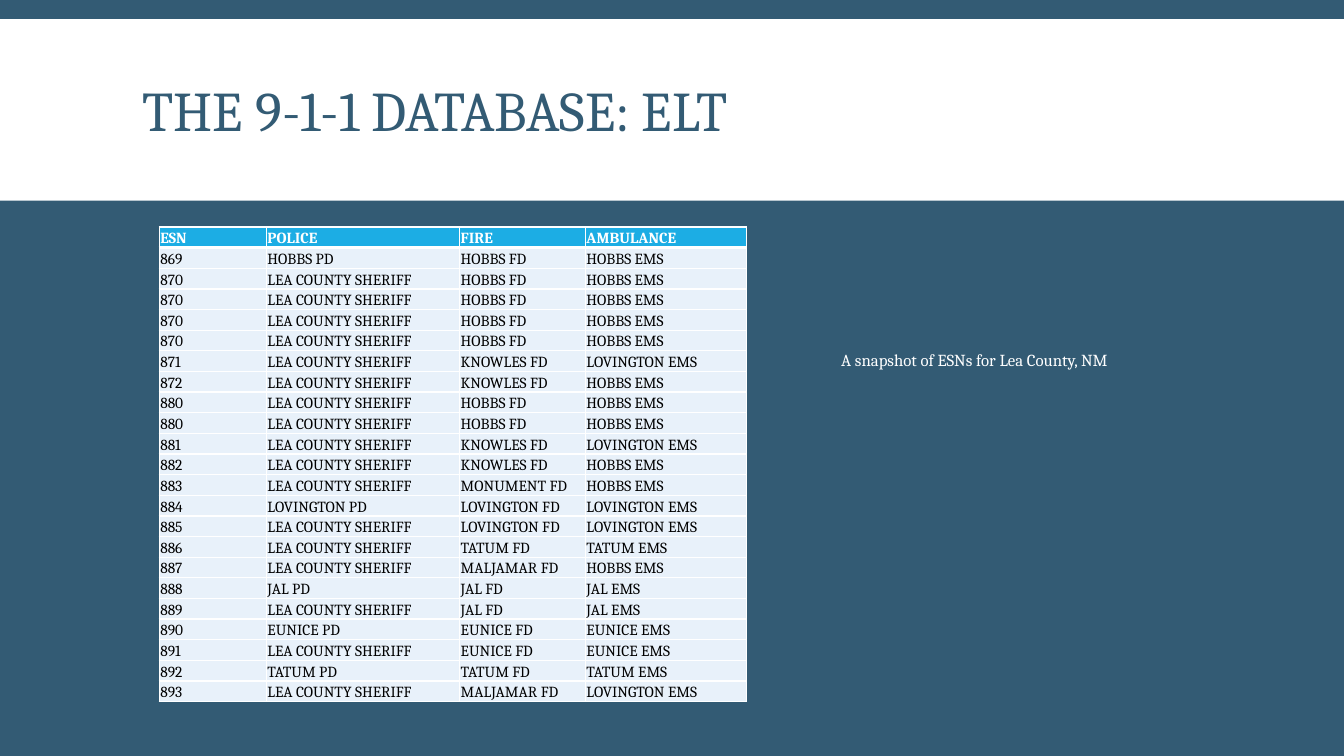
from typing import NamedTuple

from lxml import etree
from pptx import Presentation
from pptx import util as u
from pptx.dml import color
from pptx.enum import shapes, text
from pptx.oxml import ns

FONT = "Cambria"
NAVY, WHITE, BLACK = "335B74", "FFFFFF", "000000"
HEADER_BLUE, ROW_BLUE = "1CADE4", "E8F1FA"


class Zone(NamedTuple):
    """Service zone: emergency service number and its responders."""
    esn: str
    police: str
    fire: str
    ambulance: str


class Label(NamedTuple):
    wording: str
    left: float
    top: float
    width: float
    height: float
    size: float
    colour: str
    anchor: text.MSO_ANCHOR
    wrap: bool
    line_spacing: float


SHERIFF = "LEA COUNTY SHERIFF"
HEADER = Zone("ESN", "POLICE", "FIRE", "AMBULANCE")
ZONES = [
    Zone("869", "HOBBS PD", "HOBBS FD", "HOBBS EMS"),
    *[Zone("870", SHERIFF, "HOBBS FD", "HOBBS EMS")] * 4,
    Zone("871", SHERIFF, "KNOWLES FD", "LOVINGTON EMS"),
    Zone("872", SHERIFF, "KNOWLES FD", "HOBBS EMS"),
    *[Zone("880", SHERIFF, "HOBBS FD", "HOBBS EMS")] * 2,
    Zone("881", SHERIFF, "KNOWLES FD", "LOVINGTON EMS"),
    Zone("882", SHERIFF, "KNOWLES FD", "HOBBS EMS"),
    Zone("883", SHERIFF, "MONUMENT FD", "HOBBS EMS"),
    Zone("884", "LOVINGTON PD", "LOVINGTON FD", "LOVINGTON EMS"),
    Zone("885", SHERIFF, "LOVINGTON FD", "LOVINGTON EMS"),
    Zone("886", SHERIFF, "TATUM FD", "TATUM EMS"),
    Zone("887", SHERIFF, "MALJAMAR FD", "HOBBS EMS"),
    Zone("888", "JAL PD", "JAL FD", "JAL EMS"),
    Zone("889", SHERIFF, "JAL FD", "JAL EMS"),
    Zone("890", "EUNICE PD", "EUNICE FD", "EUNICE EMS"),
    Zone("891", SHERIFF, "EUNICE FD", "EUNICE EMS"),
    Zone("892", "TATUM PD", "TATUM FD", "TATUM EMS"),
    Zone("893", SHERIFF, "MALJAMAR FD", "LOVINGTON EMS"),
]
COLUMN_WIDTHS = [2.7, 4.87, 3.17, 4.07]
TABLE_LEFT, TABLE_TOP, TABLE_HEIGHT = 4.01, 5.72, 11.98

LABELS = [
    Label("THE 9-1-1 DATABASE: ELT", 3.35, 0.79, 27.18, 4.19, 40, NAVY,
          text.MSO_ANCHOR.MIDDLE, True, 0.85),
    Label("A snapshot of ESNs for Lea County, NM", 20.95, 8.69, 7.54, 0.77, 12, WHITE,
          text.MSO_ANCHOR.TOP, False, 1.0),
]


def paint(fill, colour: str) -> None:
    fill.solid()
    fill.fore_color.rgb = color.RGBColor.from_string(colour)


def add_run(paragraph, wording: str, size: float, colour: str, bold: bool = False) -> None:
    run = paragraph.add_run()
    run.text = wording
    run.font.name = FONT
    run.font.size = u.Pt(size)
    run.font.bold = bold
    run.font.color.rgb = color.RGBColor.from_string(colour)


def add_label(slide, label: Label) -> None:
    box = slide.shapes.add_textbox(
        u.Cm(label.left), u.Cm(label.top), u.Cm(label.width), u.Cm(label.height))
    frame = box.text_frame
    frame.word_wrap = label.wrap
    frame.vertical_anchor = label.anchor
    paragraph = frame.paragraphs[0]
    paragraph.line_spacing = label.line_spacing
    add_run(paragraph, label.wording, label.size, label.colour)


def add_border(cell, side: str, points: float) -> None:
    properties = cell._tc.get_or_add_tcPr()
    line = etree.SubElement(properties, ns.qn(f"a:ln{side}"), w=str(u.Pt(points)))
    fill = etree.SubElement(line, ns.qn("a:solidFill"))
    etree.SubElement(fill, ns.qn("a:srgbClr"), val=WHITE)


def fill_cell(cell, wording: str, row: int) -> None:
    is_header = row == 0
    cell.margin_left = cell.margin_right = cell.margin_top = u.Cm(0.03)
    cell.margin_bottom = 0
    cell.vertical_anchor = text.MSO_ANCHOR.BOTTOM
    borders = {"L": 1, "R": 1, "T": 3 if row == 1 else 1, "B": 3 if is_header else 1}
    for side, points in borders.items():
        add_border(cell, side, points)
    paint(cell.fill, HEADER_BLUE if is_header else ROW_BLUE)
    add_run(cell.text_frame.paragraphs[0], wording, 11,
            WHITE if is_header else BLACK, is_header)


def add_zone_table(slide) -> None:
    records = [HEADER, *ZONES]
    table = slide.shapes.add_table(
        len(records), len(COLUMN_WIDTHS), u.Cm(TABLE_LEFT), u.Cm(TABLE_TOP),
        u.Cm(sum(COLUMN_WIDTHS)), u.Cm(TABLE_HEIGHT)).table
    table.horz_banding = False
    for column, width in zip(table.columns, COLUMN_WIDTHS):
        column.width = u.Cm(width)
    for row, record in enumerate(records):
        table.rows[row].height = u.Cm(TABLE_HEIGHT / len(records))
        for column, wording in enumerate(record):
            fill_cell(table.cell(row, column), wording, row)


def main() -> None:
    presentation = Presentation()
    presentation.slide_width = u.Cm(33.87)
    presentation.slide_height = u.Cm(19.05)
    slide = presentation.slides.add_slide(presentation.slide_layouts[6])
    paint(slide.background.fill, NAVY)

    title_band = slide.shapes.add_shape(
        shapes.MSO_SHAPE.RECTANGLE, 0, u.Cm(0.48), presentation.slide_width, u.Cm(4.58))
    title_band.shadow.inherit = False
    paint(title_band.fill, WHITE)
    title_band.line.fill.background()

    add_zone_table(slide)
    for label in LABELS:
        add_label(slide, label)
    presentation.save("out.pptx")


if __name__ == "__main__":
    main()
